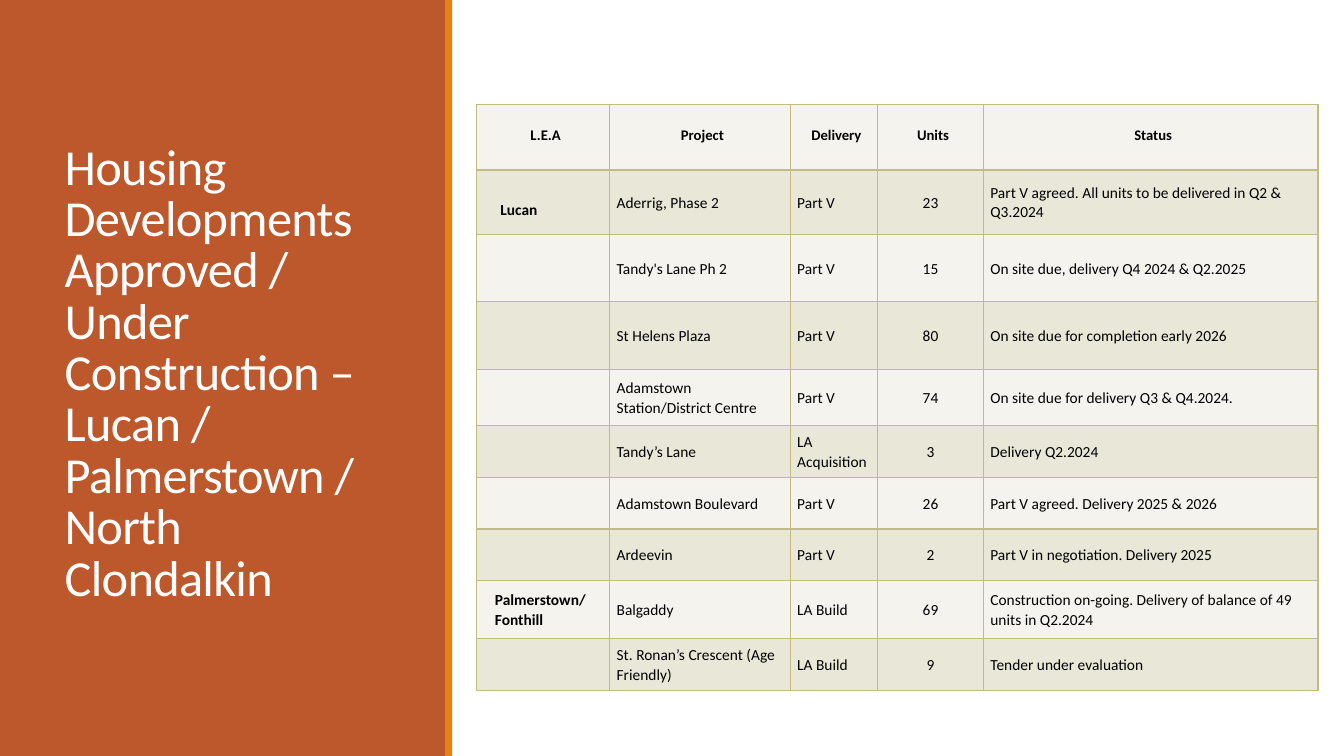
from lxml import etree
from pptx import Presentation
from pptx.dml.color import RGBColor
from pptx.enum import shapes, text
from pptx.oxml import ns
from pptx.util import Pt

COLORS = {"rust": "BD582C", "orange": "E48312", "white": "FFFFFF", "black": "000000",
          "light": "F4F3ED", "dark": "E9E7D8", "border": "C2BC80"}
TITLE = ("Housing Developments Approved / Under Construction – "
         "Lucan / Palmerstown / North Clondalkin")
COL_WIDTHS = [95, 129, 62.5, 75.5, 239]
ROW_HEIGHTS = [47, 46, 48, 48.5, 40, 37, 37, 37, 41, 37.5]
ROWS = [
    ["L.E.A", "Project", "Delivery", "Units", "Status"],
    ["Lucan", "Aderrig, Phase 2", "Part V", "23",
     "Part V agreed. All units to be delivered in Q2 & Q3.2024"],
    ["", "Tandy's Lane Ph 2", "Part V", "15", "On site due, delivery Q4 2024 & Q2.2025"],
    ["", "St Helens Plaza", "Part V", "80", "On site due for completion early 2026"],
    ["", "Adamstown Station/District Centre", "Part V", "74",
     "On site due for delivery Q3 & Q4.2024."],
    ["", "Tandy’s Lane", "LA Acquisition", "3", "Delivery Q2.2024"],
    ["", "Adamstown Boulevard", "Part V", "26", "Part V agreed. Delivery 2025 & 2026"],
    ["", "Ardeevin", "Part V", "2", "Part V in negotiation. Delivery 2025"],
    ["Palmerstown/\nFonthill", "Balgaddy", "LA Build", "69",
     "Construction on-going. Delivery of balance of 49 units in Q2.2024"],
    ["", "St. Ronan’s Crescent (Age Friendly)", "LA Build", "9", "Tender under evaluation"],
]
# Cell insets: left, top, right, bottom
HEADER_INSETS = (9.5, 3.5, 6, 6)
BODY_INSETS = (5, 0, 5, 0)
AREA_INSETS = {"Lucan": (17, 22, 8.5, 8.5), "Palmerstown/\nFonthill": (13, 6, 7, 5)}


def rgb(name):
    return RGBColor.from_string(COLORS[name])


def set_attrs(obj, values):
    for name, value in values.items():
        setattr(obj, name, value)


def style_font(font, size, color, bold=False):
    set_attrs(font, {"name": "Calibri", "size": Pt(size), "bold": bold})
    font.color.rgb = rgb(color)


def add_bar(s, left, width, color):
    """Add a full-height vertical band."""
    bar = s.shapes.add_shape(shapes.MSO_SHAPE.RECTANGLE, Pt(left), 0, Pt(width), Pt(540))
    bar.shadow.inherit = False
    bar.fill.solid()
    bar.fill.fore_color.rgb = rgb(color)
    bar.line.fill.background()


def format_title(title):
    set_attrs(title, {"left": Pt(39), "top": Pt(41), "width": Pt(243), "height": Pt(454)})
    tf = title.text_frame
    tf.text = TITLE
    set_attrs(tf, {"word_wrap": True, "auto_size": text.MSO_AUTO_SIZE.NONE,
                   "vertical_anchor": text.MSO_ANCHOR.MIDDLE})
    p = tf.paragraphs[0]
    set_attrs(p, {"alignment": text.PP_ALIGN.LEFT, "line_spacing": 0.85})
    r = p.runs[0]
    style_font(r.font, 36, "white")
    r.font._element.set("spc", "-50")


def set_borders(cell):
    """Put the border lines ahead of the cell's fill, as the schema requires."""
    tc_pr = cell._tc.get_or_add_tcPr()
    for i, side in enumerate(("lnL", "lnR", "lnT", "lnB")):
        ln = etree.Element(ns.qn(f"a:{side}"), w=str(Pt(1)))
        fill = etree.SubElement(ln, ns.qn("a:solidFill"))
        etree.SubElement(fill, ns.qn("a:srgbClr"), val=COLORS["border"])
        tc_pr.insert(i, ln)


def format_cell(cell, words, row, col):
    header, area = row == 0, words in AREA_INSETS
    insets = HEADER_INSETS if header else AREA_INSETS.get(words, BODY_INSETS)
    sides = ("margin_left", "margin_top", "margin_right", "margin_bottom")
    set_attrs(cell, dict(zip(sides, map(Pt, insets))))
    cell.vertical_anchor = text.MSO_ANCHOR.TOP if area else text.MSO_ANCHOR.MIDDLE
    cell.fill.solid()
    cell.fill.fore_color.rgb = rgb("dark" if row % 2 else "light")
    set_borders(cell)
    if not words:
        return
    cell.text_frame.text = words
    centred = header or col == 3
    for p in cell.text_frame.paragraphs:
        p.alignment = text.PP_ALIGN.CENTER if centred else text.PP_ALIGN.LEFT
        p.line_spacing = 1.0 if header or (row == 1 and col in (0, 4)) else 1.07
        style_font(p.runs[0].font, 10.5 if header else 11, "black", header or area)


def add_projects_table(s):
    frame = s.shapes.add_table(len(ROWS), len(COL_WIDTHS), Pt(340.5), Pt(74.5),
                               Pt(sum(COL_WIDTHS)), Pt(sum(ROW_HEIGHTS)))
    table = frame.table
    set_attrs(table, {"first_row": False, "horz_banding": False})
    for column, width in zip(table.columns, COL_WIDTHS):
        column.width = Pt(width)
    for i, (height, values) in enumerate(zip(ROW_HEIGHTS, ROWS)):
        table.rows[i].height = Pt(height)
        for j, words in enumerate(values):
            format_cell(table.cell(i, j), words, i, j)


def main():
    prs = Presentation()
    set_attrs(prs, {"slide_width": Pt(960), "slide_height": Pt(540)})
    s = prs.slides.add_slide(prs.slide_layouts[5])
    title = s.shapes.title
    add_bar(s, 0, 319, "rust")
    s.shapes._spTree.append(title._element)
    format_title(title)
    add_bar(s, 318, 5, "orange")
    add_projects_table(s)
    prs.save("out.pptx")


if __name__ == "__main__":
    main()
